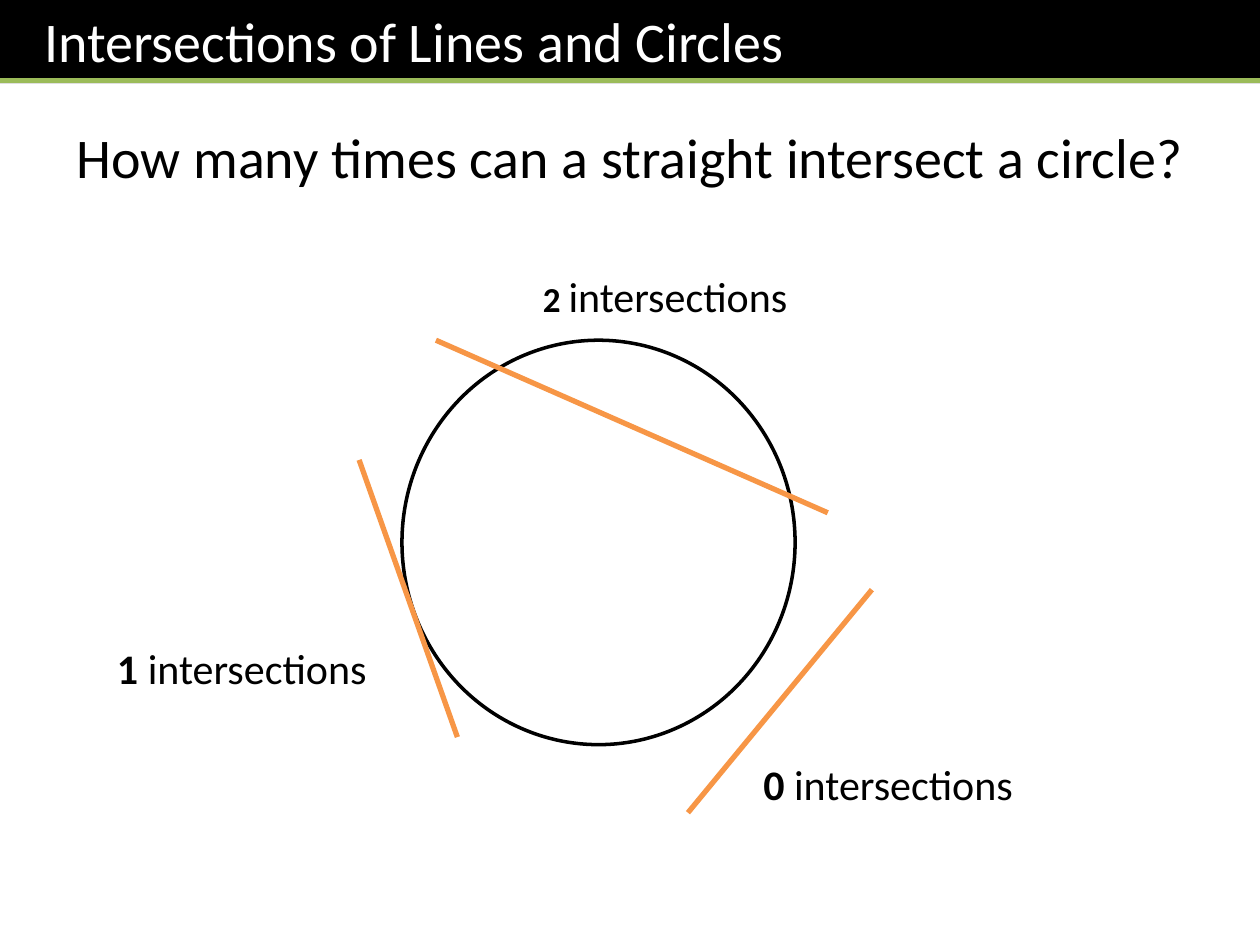
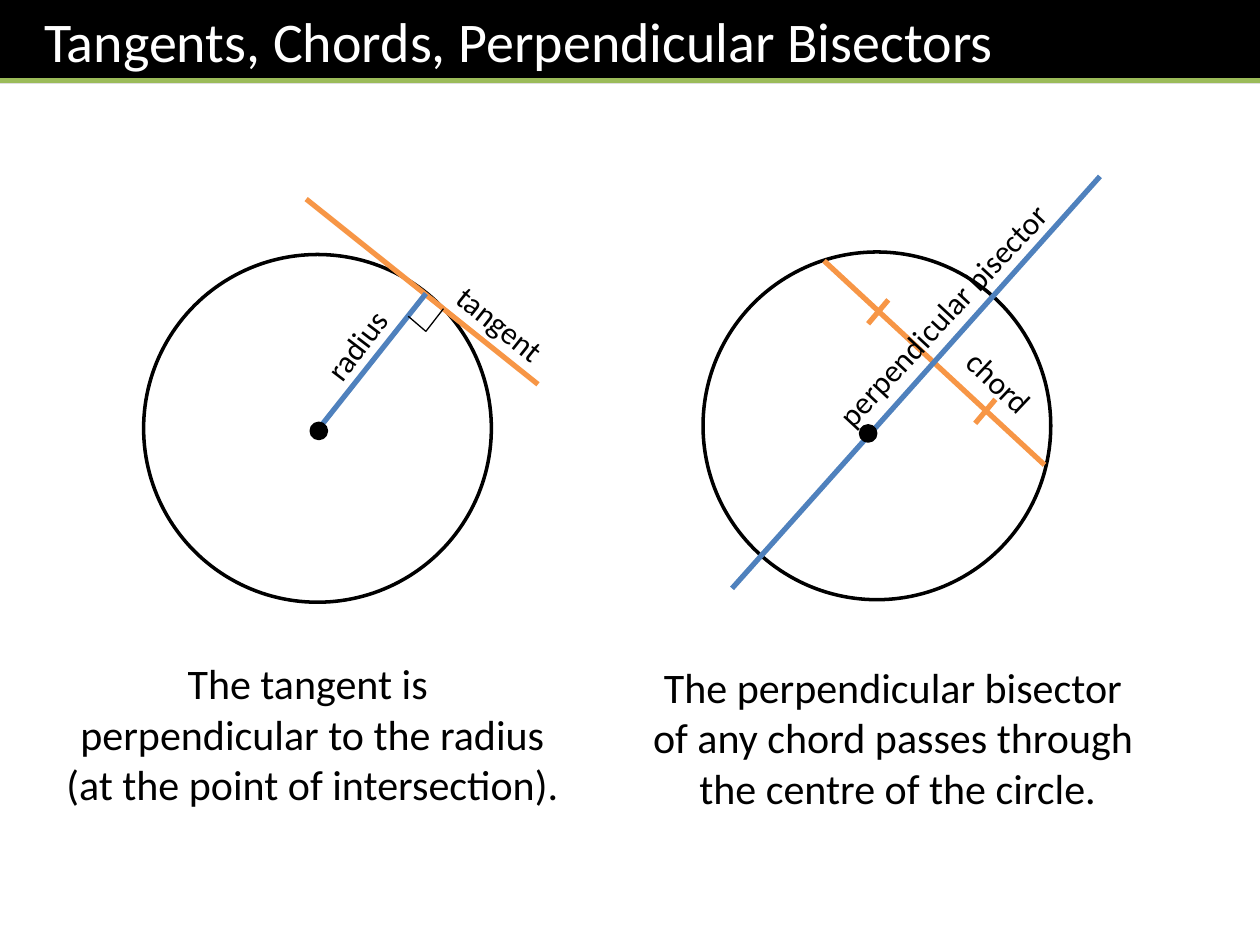
from dataclasses import dataclass

from lxml.etree import SubElement
from pptx import Presentation
from pptx.dml.color import RGBColor as Rgb
from pptx.enum.shapes import MSO_CONNECTOR as Link, MSO_SHAPE as Form
from pptx.enum.text import MSO_ANCHOR as Anchor, PP_ALIGN as Align
from pptx.oxml.ns import qn
from pptx.slide import Slide
from pptx.util import Inches, Pt

HUES = {"ink": "000000", "paper": "FFFFFF", "rule": "9BBB59",
        "cut": "F79646", "axis": "4F81BD"}
FONT = "Calibri"
WIDE, HIGH = 10, 7.5


@dataclass
class Disc:
    left: float
    top: float
    width: float
    height: float
    fill: str = "paper"


@dataclass
class Line:
    x1: float
    y1: float
    x2: float
    y2: float
    hue: str = "cut"
    weight: float = 3


@dataclass
class Label:
    left: float
    top: float
    width: float
    height: float
    rows: list[str]
    size: float = 24
    turn: float = 0
    align: Align = Align.CENTER
    lead: str = ""  # bold opening words
    lead_size: float = 24


def tint(name: str) -> Rgb:
    return Rgb.from_string(HUES[name])


def add_run(para, text: str, size: float, hue: str = "ink", bold: bool = False) -> None:
    run = para.add_run()
    run.text = text
    style = {"name": FONT, "size": Pt(size), "bold": bold}
    for key, value in style.items():
        setattr(run.font, key, value)
    run.font.color.rgb = tint(hue)


def add_disc(slide: Slide, disc: Disc) -> None:
    box = map(Inches, (disc.left, disc.top, disc.width, disc.height))
    shape = slide.shapes.add_shape(Form.OVAL, *box)
    shape.shadow.inherit = False
    shape.fill.solid()
    shape.fill.fore_color.rgb = tint(disc.fill)
    shape.line.color.rgb = tint("ink")
    shape.line.width = Pt(2)


def add_line(slide: Slide, line: Line) -> None:
    ends = map(Inches, (line.x1, line.y1, line.x2, line.y2))
    link = slide.shapes.add_connector(Link.STRAIGHT, *ends)
    link.line.color.rgb = tint(line.hue)
    link.line.width = Pt(line.weight)
    SubElement(link._element.spPr, qn("a:effectLst"))


def add_label(slide: Slide, label: Label) -> None:
    box = map(Inches, (label.left, label.top, label.width, label.height))
    shape = slide.shapes.add_textbox(*box)
    shape.rotation = label.turn
    frame = shape.text_frame
    frame.word_wrap = True
    for i, row in enumerate(label.rows):
        para = frame.add_paragraph() if i else frame.paragraphs[0]
        para.alignment = label.align
        if label.lead and not i:
            add_run(para, label.lead, label.lead_size, bold=True)
        add_run(para, row, label.size)


def add_head(slide: Slide, title: str) -> None:
    band = slide.shapes.add_shape(Form.RECTANGLE, 0, 0, Inches(WIDE), Inches(0.66))
    band.shadow.inherit = False
    band.fill.solid()
    band.fill.fore_color.rgb = tint("ink")
    band.line.fill.background()
    frame = band.text_frame
    style = {"margin_left": Inches(0.35), "word_wrap": True,
             "vertical_anchor": Anchor.TOP}
    for key, value in style.items():
        setattr(frame, key, value)
    para = frame.paragraphs[0]
    para.alignment = Align.LEFT
    add_run(para, title, 32, "paper")
    add_line(slide, Line(0, 0.64, WIDE, 0.64, "rule"))


DRAW = {Disc: add_disc, Line: add_line, Label: add_label}


def add_page(deck, title: str, parts: list) -> None:
    slide = deck.slides.add_slide(deck.slide_layouts[6])
    add_head(slide, title)
    for part in parts:
        DRAW[type(part)](slide, part)


def count(left: float, top: float, width: float, lead: str, size: float = 24) -> Label:
    return Label(left, top, width, 0.59, ["intersections"], align=Align.LEFT,
                 lead=lead, lead_size=size)


def tick(x: float, y: float) -> Line:
    return Line(x, y, x + 0.16, y - 0.19)


def name(left: float, top: float, width: float, text: str, turn: float) -> Label:
    return Label(left, top, width, 0.4, [text], 18, turn)


def meet() -> list:
    """Lines that cross, touch and miss a circle."""
    return [
        Label(0, 0.92, WIDE, 0.64,
              ["How many times can a straight intersect a circle?"], 32),
        Disc(3.19, 2.7, 3.12, 3.21),
        Line(3.46, 2.7, 6.57, 4.07),
        Line(2.85, 3.65, 3.63, 5.85),
        Line(6.92, 4.68, 5.46, 6.45),
        count(4.21, 2.1, 2.49, "2 ", 20),
        count(0.83, 5.05, 2.49, "1 "),
        count(5.96, 5.97, 3.06, "0 "),
    ]


def touch() -> list:
    """Tangent and radius, with the right angle between them."""
    x, y = 3.38, 2.63
    return [
        Disc(1.14, 2.02, 2.76, 2.76),
        Line(2.43, 1.58, 4.27, 3.05),
        Line(2.5, 3.44, 3.38, 2.33, "axis"),
        Line(x, y, x + 0.14, y - 0.18, "ink", 0.75),
        Line(x, y, x - 0.14, y - 0.12, "ink", 0.75),
        name(2.41, 2.54, 0.83, "radius", 307.2),
        name(3.37, 2.37, 1.2, "tangent", 38.7),
        Disc(2.47, 3.36, 0.12, 0.12, "ink"),
        Label(0.35, 5.17, 4.26, 1.31, [
            "The tangent is ",
            "perpendicular to the radius (at the point of intersection)."]),
    ]


def halve() -> list:
    """Chord cut in two equal parts by its perpendicular bisector."""
    return [
        Disc(5.58, 2, 2.76, 2.76),
        Line(6.54, 2.07, 8.29, 3.69),
        Line(5.81, 4.67, 8.73, 1.4, "axis"),
        tick(7.74, 3.36),
        tick(6.89, 2.57),
        name(7.33, 2.83, 1.2, "chord", 43.4),
        name(6.06, 2.3, 2.83, "perpendicular bisector", 312.8),
        Disc(6.83, 3.38, 0.12, 0.12, "ink"),
        Label(4.84, 5.2, 4.57, 1.31, [
            "The perpendicular bisector ",
            "of any chord passes through ",
            "the centre of the circle."]),
    ]


def main() -> None:
    deck = Presentation()
    deck.slide_width, deck.slide_height = Inches(WIDE), Inches(HIGH)
    add_page(deck, "Intersections of Lines and Circles", meet())
    add_page(deck, "Tangents, Chords, Perpendicular Bisectors", touch() + halve())
    deck.save("out.pptx")


if __name__ == "__main__":
    main()
